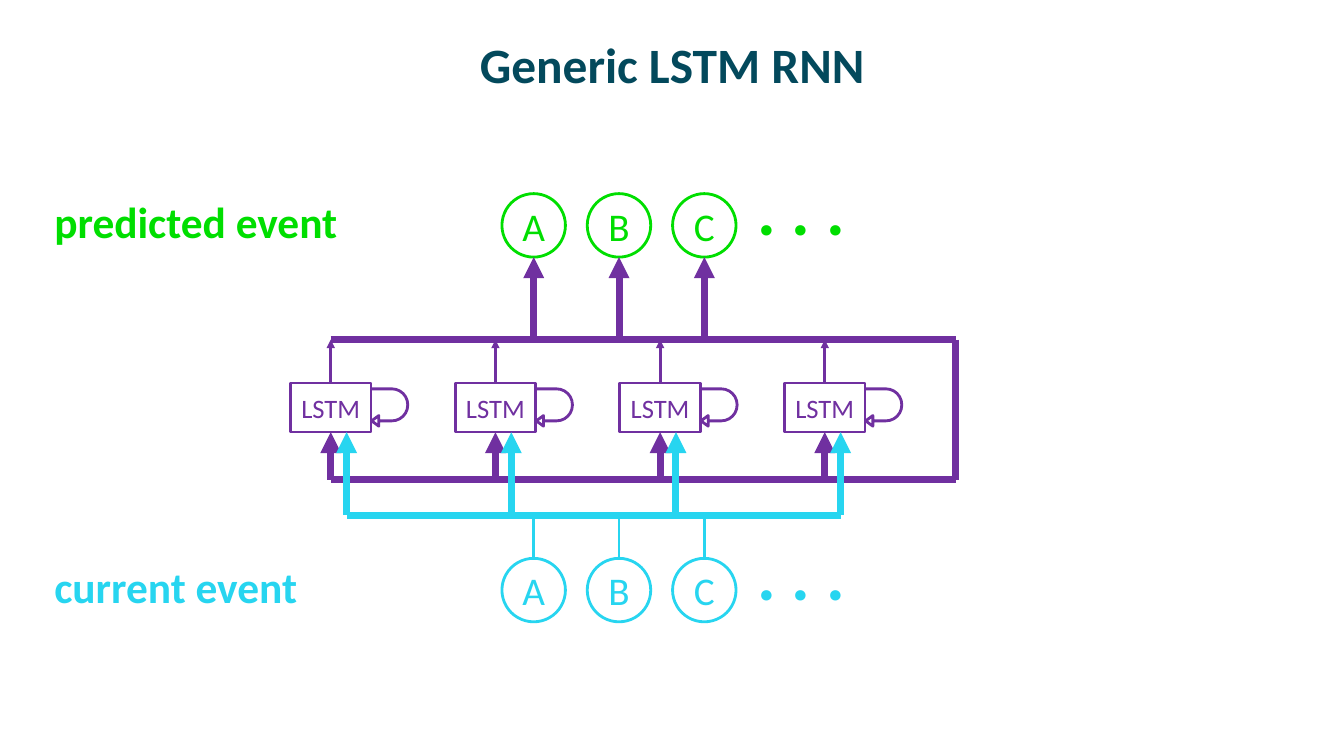
from lxml.etree import SubElement
from pptx import Presentation
from pptx.dml.color import RGBColor
from pptx.enum.shapes import MSO_CONNECTOR, MSO_SHAPE
from pptx.enum.text import MSO_ANCHOR, MSO_AUTO_SIZE, PP_ALIGN
from pptx.oxml.ns import qn
from pptx.util import Cm, Pt

TEAL = RGBColor(0x03, 0x49, 0x5C)
GREEN = RGBColor(0x00, 0xDE, 0x00)
PURPLE = RGBColor(0x70, 0x30, 0xA0)
CYAN = RGBColor(0x27, 0xD5, 0xF0)
WHITE = RGBColor(0xFF, 0xFF, 0xFF)
FONT = "Calibri"
THIN, THICK = 2, 5  # line widths in points

TITLE = "Generic LSTM RNN"
EVENTS = ["A", "B", "C"]
ELLIPSIS = ". . ."
CELLS = ["LSTM"] * 4
# label, colour, top of the circles, label width
PREDICTED = ("predicted event", GREEN, 4.88, 7.72)
CURRENT = ("current event", CYAN, 14.07, 6.71)

# All positions below are in centimetres
CIRCLE_LEFT, CIRCLE_PITCH, CIRCLE_SIZE = 12.65, 2.15, 1.6
CELL_LEFT, CELL_TOP, CELL_PITCH = 7.32, 9.65, 4.15
CELL_WIDTH, CELL_HEIGHT = 2.03, 1.24
LOOP_WIDTH, LOOP_HEIGHT = 0.94, 0.91
LOOP_ADJUSTMENTS = [0, 0.147, 0.199, 0.438, 1]
OUTPUT_Y, FEEDBACK_Y, INPUT_Y = 8.56, 12.09, 12.98
FEEDBACK_X = 24.08
INPUT_SHIFT = 0.4

cell_lefts = [CELL_LEFT + i * CELL_PITCH for i in range(len(CELLS))]
cell_centers = [left + CELL_WIDTH / 2 for left in cell_lefts]
cell_bottom = CELL_TOP + CELL_HEIGHT
circle_lefts = [CIRCLE_LEFT + i * CIRCLE_PITCH for i in range(len(EVENTS))]
circle_centers = [left + CIRCLE_SIZE / 2 for left in circle_lefts]

presentation = Presentation()
presentation.slide_width = Cm(33.87)
presentation.slide_height = Cm(19.05)
slide = presentation.slides.add_slide(presentation.slide_layouts[6])


def write(shape, text, size, color, bold=False, align=PP_ALIGN.CENTER):
    frame = shape.text_frame
    frame.text = text
    paragraph = frame.paragraphs[0]
    paragraph.alignment = align
    font = paragraph.runs[0].font
    font.name, font.size, font.bold = FONT, Pt(size), bold
    font.color.rgb = color


def clear_margins(frame):
    frame.margin_left = frame.margin_right = 0
    frame.margin_top = frame.margin_bottom = 0


def add_label(text, left, top, width, height, size, color):
    box = slide.shapes.add_textbox(Cm(left), Cm(top), Cm(width), Cm(height))
    write(box, text, size, color, bold=True, align=PP_ALIGN.LEFT)
    box.text_frame.word_wrap = False
    box.text_frame.auto_size = MSO_AUTO_SIZE.SHAPE_TO_FIT_TEXT
    return box


def add_outline(kind, left, top, width, height, color):
    """Add a white shape with a thin coloured outline."""
    shape = slide.shapes.add_shape(kind, Cm(left), Cm(top), Cm(width), Cm(height))
    shape.shadow.inherit = False
    shape.fill.solid()
    shape.fill.fore_color.rgb = WHITE
    shape.line.color.rgb = color
    shape.line.width = Pt(THIN)
    clear_margins(shape.text_frame)
    shape.text_frame.vertical_anchor = MSO_ANCHOR.MIDDLE
    return shape


def add_line(x1, y1, x2, y2, color, width, arrow=False):
    """Add a straight line, with an arrowhead at its end if asked."""
    line = slide.shapes.add_connector(
        MSO_CONNECTOR.STRAIGHT, Cm(x1), Cm(y1), Cm(x2), Cm(y2))
    line.line.color.rgb = color
    line.line.width = Pt(width)
    if arrow:
        SubElement(line.line._get_or_add_ln(), qn("a:tailEnd"), type="triangle")
    SubElement(line._element.spPr, qn("a:effectLst"))


def add_events(label, color, top, label_width):
    """Add a row of event circles with its label and trailing dots."""
    dots = add_label(ELLIPSIS, 19.08, top - 0.7, 2.9, 2.77, 50, color)
    clear_margins(dots.text_frame)
    for event, left in zip(EVENTS, circle_lefts):
        circle = add_outline(
            MSO_SHAPE.OVAL, left, top, CIRCLE_SIZE, CIRCLE_SIZE, color)
        write(circle, event, 28, color)
    add_label(label, 1.12, top - 0.09, label_width, 1.57, 31, color)


def add_cells():
    for name, left in zip(CELLS, cell_lefts):
        cell = add_outline(
            MSO_SHAPE.RECTANGLE, left, CELL_TOP, CELL_WIDTH, CELL_HEIGHT, PURPLE)
        write(cell, name, 19, PURPLE)
        loop = add_outline(
            MSO_SHAPE.U_TURN_ARROW, left + CELL_WIDTH,
            CELL_TOP + (CELL_HEIGHT - LOOP_HEIGHT) / 2,
            LOOP_WIDTH, LOOP_HEIGHT, PURPLE)
        loop.rotation = 90
        for i, value in enumerate(LOOP_ADJUSTMENTS):
            loop.adjustments[i] = value


def add_wiring():
    first, last = cell_centers[0], cell_centers[-1]
    for x in cell_centers:
        add_line(x, CELL_TOP, x, OUTPUT_Y, PURPLE, THIN, arrow=True)
        add_line(x, FEEDBACK_Y, x, cell_bottom, PURPLE, THICK, arrow=True)
    for y in (OUTPUT_Y, FEEDBACK_Y):
        add_line(first, y, FEEDBACK_X, y, PURPLE, THICK)
    add_line(FEEDBACK_X, OUTPUT_Y, FEEDBACK_X, FEEDBACK_Y, PURPLE, THICK)

    add_line(first + INPUT_SHIFT, INPUT_Y, last + INPUT_SHIFT, INPUT_Y, CYAN, THICK)
    for x in cell_centers:
        add_line(x + INPUT_SHIFT, INPUT_Y, x + INPUT_SHIFT, cell_bottom,
                 CYAN, THICK, arrow=True)

    predicted_bottom = PREDICTED[2] + CIRCLE_SIZE
    for x in circle_centers:
        add_line(x, OUTPUT_Y, x, predicted_bottom, PURPLE, THICK, arrow=True)
        add_line(x, CURRENT[2], x, INPUT_Y, CYAN, THIN)


title = slide.shapes.add_textbox(Cm(1.7), Cm(0.43), Cm(30.48), Cm(2.34))
title.text_frame.word_wrap = True
title.text_frame.vertical_anchor = MSO_ANCHOR.MIDDLE
write(title, TITLE, 35.3, TEAL, bold=True)

add_events(*PREDICTED)
add_cells()
add_wiring()
add_events(*CURRENT)

presentation.save("out.pptx")
